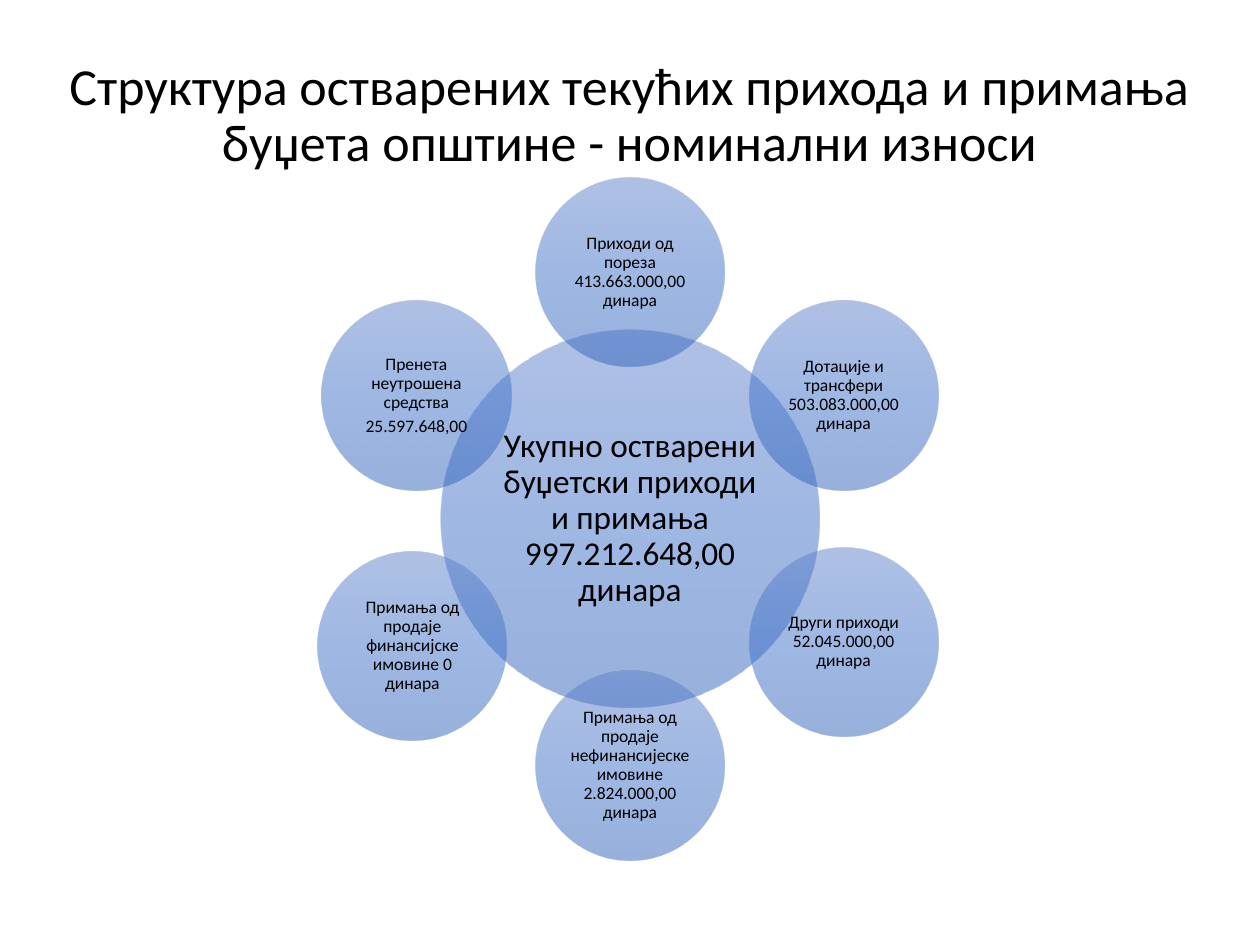
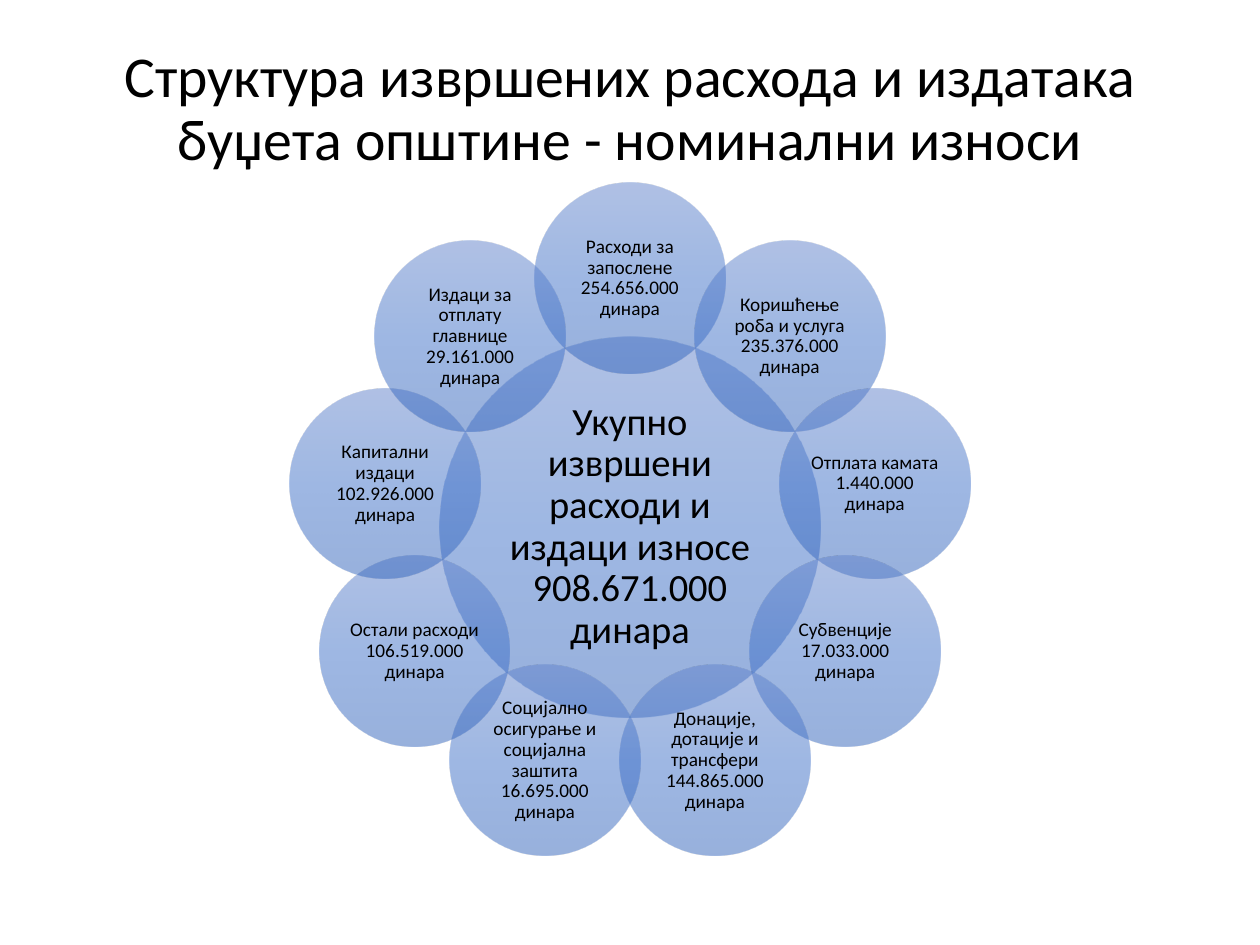
from math import cos, radians, sin

from lxml import etree
from pptx import Presentation
from pptx.dml.color import RGBColor
from pptx.enum.lang import MSO_LANGUAGE_ID as Language
from pptx.enum.shapes import MSO_SHAPE as Shape
from pptx.enum.text import MSO_ANCHOR as Anchor, MSO_AUTO_SIZE as AutoSize, PP_ALIGN as Align
from pptx.oxml.ns import qn
from pptx.util import Cm, Pt

SLIDE_WIDTH, SLIDE_HEIGHT = 25.4, 19.05
TITLE_BOX = (0.76, 0.64, 23.88, 2.97)
FONT = "Calibri"
TEXT_COLOUR = "000000"
CIRCLE_STOPS = ((0, "6183CB"), (50, "3E70CA"), (100, "3062BB"))
CIRCLE_OPACITY = 50
RING_RATIO = 1.305  # ring radius per petal diameter
TITLE_ONLY = 5

REVENUE = {
    "title": ["Структура остварених текућих прихода и примања",
              "буџета општине - номинални износи"],
    "title_size": 29.7,
    "centre_y": 10.46,
    "petal_size": 3.81,
    "hub": ["Укупно остварени буџетски приходи и примања 997.212.648,00 динара"],
    "hub_font": 19,
    "petal_font": 10,
    "petal_inset": 0.03,
    "petals": [
        ["Приходи од пореза 413.663.000,00 динара"],
        ["Дотације и трансфери 503.083.000,00 динара"],
        ["Други приходи 52.045.000,00 динара"],
        ["Примања од продаје нефинансијеске имовине 2.824.000,00 динара"],
        ["Примања од продаје финансијске имовине 0 динара"],
        ["Пренета неутрошена средства", "25.597.648,00"],
    ],
    "nudges": {4: (-0.08, 0.08)},
}

EXPENDITURE = {
    "title": ["Структура извршених расхода и издатака буџета општине - номинални износи"],
    "title_size": 33,
    "centre_y": 10.62,
    "petal_size": 3.84,
    "hub": ["Укупно извршени расходи и издаци износе 908.671.000 динара"],
    "hub_font": 22,
    "petal_font": 11,
    "petal_inset": 0.05,
    "petals": [
        ["Расходи за запослене 254.656.000 динара"],
        ["Коришћење роба и услуга 235.376.000 динара"],
        ["Отплата камата 1.440.000 динара"],
        ["Субвенције 17.033.000 динара"],
        ["Донације, дотације и трансфери 144.865.000 динара"],
        ["Социјално осигурање и социјална заштита 16.695.000 динара"],
        ["Остали расходи 106.519.000 динара"],
        ["Капитални издаци 102.926.000 динара"],
        ["Издаци за отплату главнице 29.161.000 динара"],
    ],
    "nudges": {},
}


def colour(hex_value):
    return RGBColor.from_string(hex_value)


def add_text(paragraph, text, size):
    run = paragraph.add_run()
    run.text = text
    run.font.name = FONT
    run.font.size = Pt(size)
    run.font.color.rgb = colour(TEXT_COLOUR)
    run.font.language_id = Language.SERBIAN_CYRILLIC


def format_paragraph(paragraph):
    paragraph.alignment = Align.CENTER
    paragraph.line_spacing = 0.9


def fill_translucent(shape):
    """Give the shape the vertical, half-transparent gradient."""
    shape.fill.gradient()
    shape.fill.gradient_angle = 270
    stops = shape.fill._xPr.find(qn("a:gradFill")).find(qn("a:gsLst"))
    for old_stop in list(stops):
        stops.remove(old_stop)
    for position, hex_value in CIRCLE_STOPS:
        stop = etree.SubElement(stops, qn("a:gs"), pos=str(position * 1000))
        rgb = etree.SubElement(stop, qn("a:srgbClr"), val=hex_value)
        etree.SubElement(rgb, qn("a:alpha"), val=str(CIRCLE_OPACITY * 1000))


def add_circle(slide, centre_x, centre_y, diameter, paragraphs, size, inset):
    left, top = centre_x - diameter / 2, centre_y - diameter / 2
    circle = slide.shapes.add_shape(
        Shape.OVAL, Cm(left), Cm(top), Cm(diameter), Cm(diameter))
    circle.shadow.inherit = False
    circle.line.fill.background()
    fill_translucent(circle)

    frame = circle.text_frame
    frame.word_wrap = True
    frame.vertical_anchor = Anchor.MIDDLE
    frame.margin_left = frame.margin_right = Cm(inset)
    frame.margin_top = frame.margin_bottom = Cm(inset)
    for index, text in enumerate(paragraphs):
        paragraph = frame.add_paragraph() if index else frame.paragraphs[0]
        format_paragraph(paragraph)
        paragraph.space_after = Pt(size * 0.3)
        add_text(paragraph, text, size)


def add_title(slide, box, lines, size):
    title = slide.shapes.title
    title.left, title.top, title.width, title.height = map(Cm, box)
    frame = title.text_frame
    frame.word_wrap = True
    frame.auto_size = AutoSize.NONE
    frame.vertical_anchor = Anchor.BOTTOM
    paragraph = frame.paragraphs[0]
    format_paragraph(paragraph)
    for index, line in enumerate(lines):
        if index:
            paragraph.add_line_break()
        add_text(paragraph, line, size)


def add_flower(slide, centre_x, centre_y, budget):
    """Draw the total as a hub and its items clockwise around it."""
    petal_size = budget["petal_size"]
    add_circle(slide, centre_x, centre_y, 2 * petal_size,
               budget["hub"], budget["hub_font"], 0.08)
    radius = RING_RATIO * petal_size
    step = 360 / len(budget["petals"])
    for index, item in enumerate(budget["petals"]):
        angle = radians(index * step)
        shift_x, shift_y = budget["nudges"].get(index, (0, 0))
        add_circle(slide,
                   centre_x + radius * sin(angle) + shift_x,
                   centre_y - radius * cos(angle) + shift_y,
                   petal_size, item, budget["petal_font"], budget["petal_inset"])


def add_budget_slide(deck, budget):
    slide = deck.slides.add_slide(deck.slide_layouts[TITLE_ONLY])
    add_title(slide, TITLE_BOX, budget["title"], budget["title_size"])
    add_flower(slide, SLIDE_WIDTH / 2, budget["centre_y"], budget)


def main():
    deck = Presentation()
    deck.slide_width, deck.slide_height = Cm(SLIDE_WIDTH), Cm(SLIDE_HEIGHT)
    for budget in (REVENUE, EXPENDITURE):
        add_budget_slide(deck, budget)
    deck.save("out.pptx")


if __name__ == "__main__":
    main()
